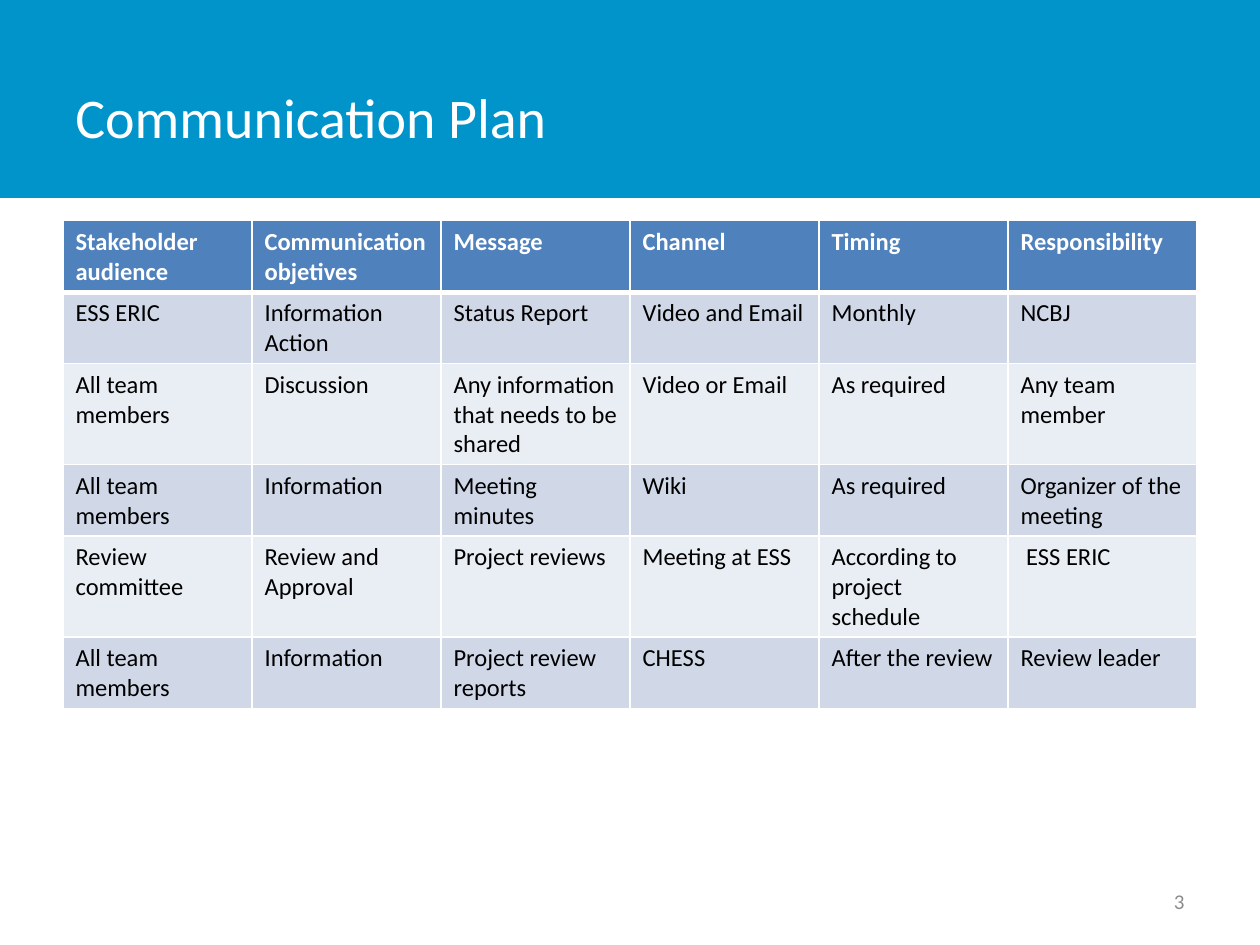
import lxml.etree
import pptx
import pptx.dml.color
import pptx.enum.shapes
import pptx.enum.text
import pptx.oxml.ns
import pptx.util

Cm = pptx.util.Cm
Pt = pptx.util.Pt
RGBColor = pptx.dml.color.RGBColor
qn = pptx.oxml.ns.qn

WHITE = RGBColor(0xFF, 0xFF, 0xFF)
BLACK = RGBColor(0x00, 0x00, 0x00)
GRAY = RGBColor(0x8C, 0x8C, 0x8C)
BANNER_BLUE = RGBColor(0x00, 0x94, 0xCA)
HEADER_BLUE = RGBColor(0x4F, 0x81, 0xBD)
BAND_COLORS = (RGBColor(0xE9, 0xED, 0xF4), RGBColor(0xD0, 0xD8, 0xE8))

PLAN = [
    ["Stakeholder audience", "Communication objetives", "Message",
     "Channel", "Timing", "Responsibility"],
    ["ESS ERIC", "Information\nAction", "Status Report",
     "Video and Email", "Monthly", "NCBJ"],
    ["All team members", "Discussion", "Any information that needs to be shared",
     "Video or Email", "As required", "Any team member"],
    ["All team members", "Information", "Meeting minutes",
     "Wiki", "As required", "Organizer of the meeting"],
    ["Review committee", "Review and Approval", "Project reviews",
     "Meeting at ESS", "According to project schedule", " ESS ERIC"],
    ["All team members", "Information", "Project review reports",
     "CHESS", "After the review", "Review leader"],
]


def style_text(frame, size, color, bold=False):
    for para in frame.paragraphs:
        para.font.name = "Calibri"
        para.font.size = Pt(size)
        para.font.color.rgb = color
        para.font.bold = bold


def add_banner(page, width):
    banner = page.shapes.add_shape(
        pptx.enum.shapes.MSO_SHAPE.RECTANGLE, 0, 0, width, Cm(3.99))
    banner.shadow.inherit = False
    banner.fill.solid()
    banner.fill.fore_color.rgb = BANNER_BLUE
    banner.line.fill.background()


def add_text(page, text, left, top, width, height, size, color, align):
    box = page.shapes.add_textbox(Cm(left), Cm(top), Cm(width), Cm(height))
    frame = box.text_frame
    frame.word_wrap = True
    frame.vertical_anchor = pptx.enum.text.MSO_ANCHOR.MIDDLE
    frame.text = text
    frame.paragraphs[0].alignment = align
    style_text(frame, size, color)


def set_borders(cell, widths):
    properties = cell._tc.get_or_add_tcPr()
    for side, width in widths.items():
        line = lxml.etree.SubElement(properties, qn(f"a:ln{side}"), w=str(Pt(width)))
        fill = lxml.etree.SubElement(line, qn("a:solidFill"))
        lxml.etree.SubElement(fill, qn("a:srgbClr"), val=str(WHITE))


def add_plan_table(page):
    row_count, column_count = len(PLAN), len(PLAN[0])
    table = page.shapes.add_table(
        row_count, column_count, Cm(1.27), Cm(4.45),
        Cm(3.81 * column_count), Cm(1.03 * row_count)).table
    for row_index, texts in enumerate(PLAN):
        is_header = row_index == 0
        widths = {"L": 1, "R": 1,
                  "T": 3 if row_index == 1 else 1,
                  "B": 3 if is_header else 1}
        for column_index, text in enumerate(texts):
            cell = table.cell(row_index, column_index)
            cell.text = text
            style_text(cell.text_frame, 14, WHITE if is_header else BLACK, is_header)
            set_borders(cell, widths)
            cell.fill.solid()
            cell.fill.fore_color.rgb = (
                HEADER_BLUE if is_header else BAND_COLORS[row_index % 2])


def main():
    deck = pptx.Presentation()
    deck.slide_width, deck.slide_height = Cm(25.4), Cm(19.05)
    page = deck.slides.add_slide(deck.slide_layouts[6])
    align = pptx.enum.text.PP_ALIGN
    add_banner(page, deck.slide_width)
    add_text(page, "Communication Plan", 1.27, 0.76, 19.84, 3.18, 32, WHITE, align.LEFT)
    add_plan_table(page)
    add_text(page, "3", 18.2, 17.66, 5.93, 1.01, 12, GRAY, align.RIGHT)
    deck.save("out.pptx")


if __name__ == "__main__":
    main()
